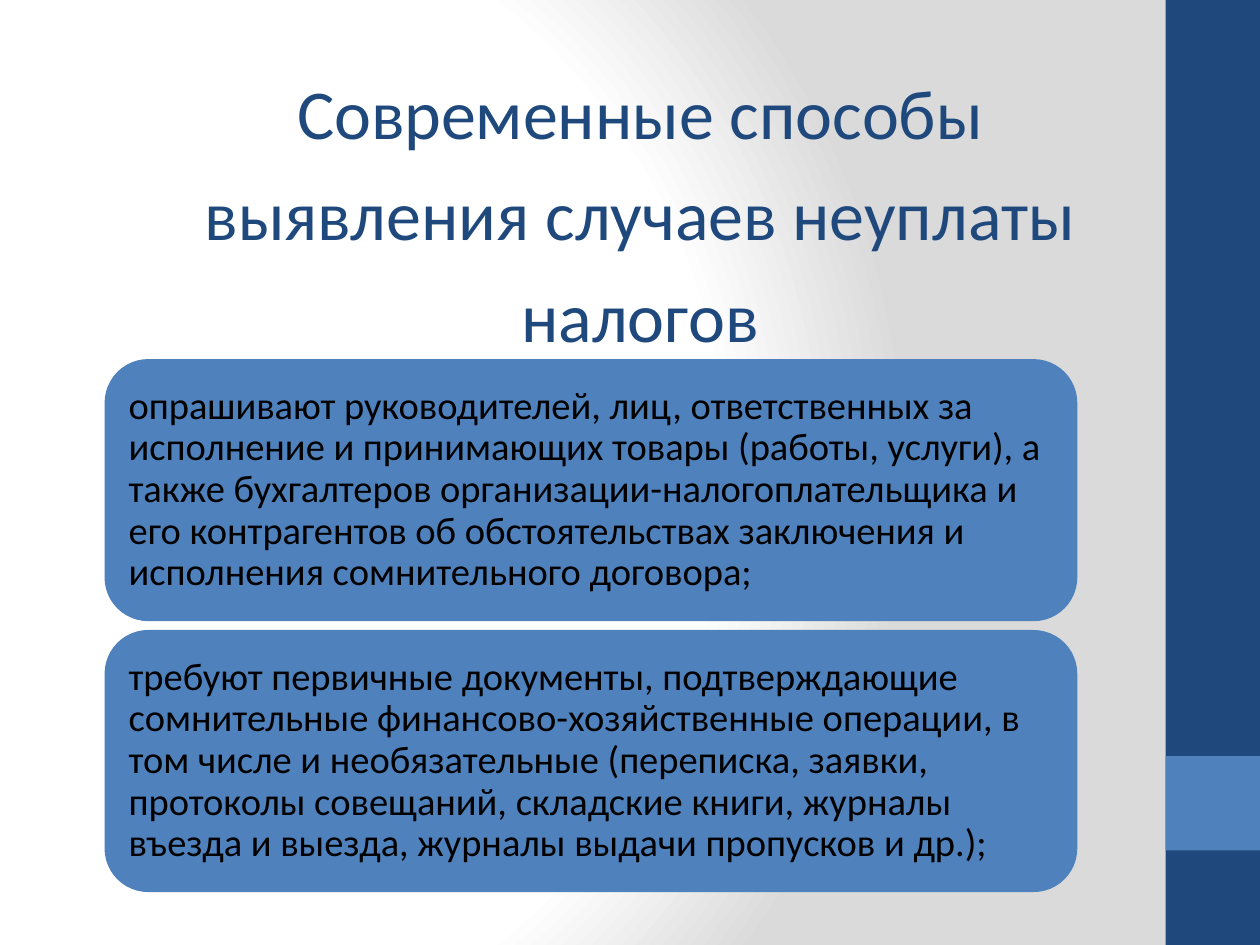
"""Build a slide on modern ways of detecting unpaid taxes."""
from lxml import etree
from pptx import Presentation
from pptx import util as u
from pptx.dml.color import RGBColor
from pptx.enum import shapes, text
from pptx.oxml.ns import qn

COLORS = {"navy": "1F497D", "blue": "4F81BD", "ink": "000000",
          "white": "FFFFFF", "gray": "DADADA"}
TITLE = "Современные способы выявления случаев неуплаты налогов"
STEPS = [
    "опрашивают руководителей, лиц, ответственных за исполнение и принимающих "
    "товары (работы, услуги), а также бухгалтеров организации-налогоплательщика "
    "и его контрагентов об обстоятельствах заключения и исполнения "
    "сомнительного договора;",
    "требуют первичные документы, подтверждающие сомнительные "
    "финансово-хозяйственные операции, в том числе и необязательные (переписка, "
    "заявки, протоколы совещаний, складские книги, журналы въезда и выезда, "
    "журналы выдачи пропусков и др.);",
]


class Deck:
    """Hold the style and the current slide."""

    def __init__(self, font):
        self.font = font
        self.prs = Presentation()
        self.prs.slide_width, self.prs.slide_height = u.Inches(10), u.Inches(7.5)
        self.slide = self.prs.slides.add_slide(self.prs.slide_layouts[5])

    def color(self, name):
        return RGBColor.from_string(COLORS[name])

    def back(self, stops, focus):
        self.slide.background.fill.gradient()
        grad = next(self.slide.element.iter(qn("a:gradFill")))
        for child in list(grad):
            grad.remove(child)
        group = etree.SubElement(grad, qn("a:gsLst"))
        for pos, name in stops:
            stop = etree.SubElement(group, qn("a:gs"), pos=str(pos * 1000))
            etree.SubElement(stop, qn("a:srgbClr"), val=COLORS[name])
        shade = etree.SubElement(grad, qn("a:path"), path="circle")
        sides = {side: str(val * 1000) for side, val in zip("ltrb", focus)}
        etree.SubElement(shade, qn("a:fillToRect"), **sides)

    def style(self, par, size, name, align, space):
        par.alignment, par.line_spacing = align, space
        par.font.name, par.font.size = self.font, u.Pt(size)
        par.font.color.rgb = self.color(name)

    def title(self, words, box):
        shape = self.slide.shapes.title
        shape.left, shape.top, shape.width, shape.height = map(u.Inches, box)
        frame = shape.text_frame
        frame.text = words
        frame.word_wrap = True
        frame.vertical_anchor = text.MSO_ANCHOR.TOP
        frame.auto_size = text.MSO_AUTO_SIZE.SHAPE_TO_FIT_TEXT
        self.style(frame.paragraphs[0], 40, "navy", text.PP_ALIGN.CENTER, u.Pt(58))

    def block(self, kind, box, name):
        shape = self.slide.shapes.add_shape(kind, *map(u.Inches, box))
        shape.shadow.inherit = False
        shape.fill.solid()
        shape.fill.fore_color.rgb = self.color(name)
        shape.line.fill.background()
        return shape

    def bar(self, box, name):
        self.block(shapes.MSO_SHAPE.RECTANGLE, box, name)

    def card(self, words, box):
        shape = self.block(shapes.MSO_SHAPE.ROUNDED_RECTANGLE, box, "blue")
        frame = shape.text_frame
        frame.text = words
        frame.word_wrap = True
        frame.vertical_anchor = text.MSO_ANCHOR.MIDDLE
        frame.margin_left = frame.margin_right = u.Inches(0.09)
        frame.margin_top = frame.margin_bottom = u.Inches(0.09)
        self.style(frame.paragraphs[0], 22, "ink", text.PP_ALIGN.LEFT, 0.9)


def main():
    deck = Deck("Calibri")
    deck.back([(0, "white"), (75, "white"), (100, "gray")], (20, 50, 100, 50))
    deck.bar((9.25, 0, 0.75, 7.5), "navy")
    deck.bar((9.25, 6, 0.75, 0.75), "blue")
    deck.title(TITLE, (1.38, 0.36, 7.4, 2.52))
    for row, words in enumerate(STEPS):
        deck.card(words, (0.83, 2.85 + row * 2.15, 7.72, 2.08))
    deck.prs.save("out.pptx")


if __name__ == "__main__":
    main()
